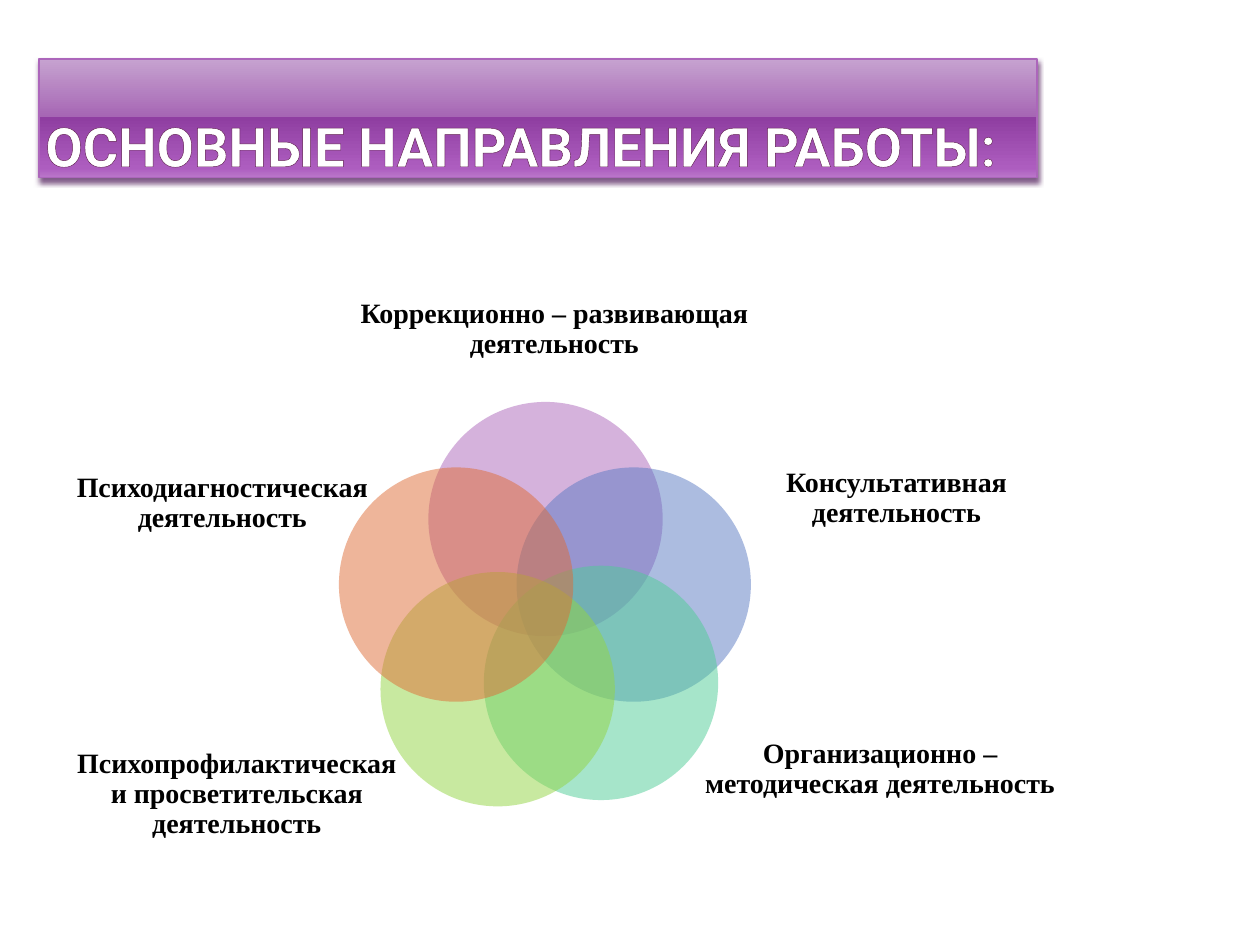
from typing import NamedTuple

from lxml import etree
from pptx import Presentation
from pptx.dml.color import RGBColor
from pptx.enum.shapes import MSO_SHAPE as Kind
from pptx.enum.text import MSO_ANCHOR as Anchor, PP_ALIGN as Align
from pptx.oxml import parse_xml
from pptx.oxml.ns import nsdecls, qn
from pptx.util import Inches, Pt

SIZE = 1.86  # diameter of every circle
TITLE = {"name": "Roboto", "size": Pt(31), "bold": True}
LABEL = {"name": "Times New Roman", "size": Pt(16), "bold": True}
STOPS = [(0, "C6A2D0"), (49, "A666B4"), (49, "8F3EA1"), (92, "AD5DBF"), (100, "BA76CA")]


class Disc(NamedTuple):
    left: float
    top: float
    color: str


class Note(NamedTuple):
    text: str
    box: tuple[float, float, float, float]


DISCS = [
    Disc(3.4, 3.19, "AC66BB"),
    Disc(4.1, 3.71, "5A7AC3"),
    Disc(3.84, 4.49, "4FCC96"),
    Disc(3.02, 4.54, "93D542"),
    Disc(2.69, 3.71, "DE6C36"),
]
NOTES = [
    Note("Коррекционно – развивающая деятельность", (2.48, 2.22, 3.84, 0.79)),
    Note("Организационно – методическая деятельность", (5.56, 5.43, 2.85, 1.35)),
    Note("Консультативная деятельность", (5.92, 3.28, 2.39, 1.35)),
    Note("Психопрофилактическая и просветительская деятельность", (0.53, 5.63, 2.7, 1.35)),
    Note("Психодиагностическая деятельность", (0.55, 3.32, 2.43, 1.35)),
]


def paint(target, color: str) -> None:
    """Give a fill one solid colour."""
    target.solid()
    target.fore_color.rgb = RGBColor.from_string(color)


def write(shape, text: str, font: dict, color: str, align, anchor, side: float = 0):
    """Put one styled paragraph in a shape and return it."""
    frame = shape.text_frame
    form = {
        "word_wrap": True, "vertical_anchor": anchor,
        "margin_left": Inches(side), "margin_right": Inches(side),
        "margin_top": 0, "margin_bottom": 0,
    }
    for key, val in form.items():
        setattr(frame, key, val)
    para = frame.paragraphs[0]
    para.alignment = align
    run = para.add_run()
    run.text = text
    for key, val in font.items():
        setattr(run.font, key, val)
    paint(run.font.fill, color)
    return para


def draw_title(slide) -> None:
    bar = slide.shapes.add_shape(
        Kind.RECTANGLE, Inches(0.31), Inches(0.47), Inches(7.92), Inches(0.94))
    bar.shadow.inherit = False
    paint(bar.line.fill, "AC66BB")
    bar.line.width = Pt(0.9)

    # Gradient from top to bottom
    stops = "".join(
        f'<a:gs pos="{pos * 1000}"><a:srgbClr val="{color}"/></a:gs>' for pos, color in STOPS)
    props = bar._element.spPr
    props.find(qn("a:prstGeom")).addnext(parse_xml(
        f'<a:gradFill {nsdecls("a")} rotWithShape="1"><a:gsLst>{stops}</a:gsLst>'
        '<a:lin ang="5400000" scaled="0"/></a:gradFill>'))

    # Soft shadow below the bar
    props.find(qn("a:effectLst")).append(parse_xml(
        f'<a:outerShdw {nsdecls("a")} blurRad="{Pt(3.1)}" dist="{Pt(2)}" dir="5400000" '
        'rotWithShape="0"><a:srgbClr val="6A3F73"><a:alpha val="83000"/></a:srgbClr>'
        '</a:outerShdw>'))

    # Heading with a hairline outline
    para = write(bar, "ОСНОВНЫЕ НАПРАВЛЕНИЯ РАБОТЫ:", TITLE, "FFFFFF",
                 Align.LEFT, Anchor.BOTTOM, 0.05)
    para.runs[0].font._element.insert(0, parse_xml(
        f'<a:ln {nsdecls("a")} w="{Pt(0.04)}"><a:solidFill>'
        '<a:srgbClr val="5E1A50"/></a:solidFill></a:ln>'))


def draw_disc(slide, disc: Disc) -> None:
    oval = slide.shapes.add_shape(
        Kind.OVAL, Inches(disc.left), Inches(disc.top), Inches(SIZE), Inches(SIZE))
    oval.shadow.inherit = False
    oval.line.fill.background()
    paint(oval.fill, disc.color)
    color = oval._element.spPr.find(qn("a:solidFill"))[0]
    etree.SubElement(color, qn("a:alpha"), val="50000")


def draw_note(slide, note: Note) -> None:
    box = slide.shapes.add_textbox(*map(Inches, note.box))
    para = write(box, note.text, LABEL, "000000", Align.CENTER, Anchor.MIDDLE)
    para.line_spacing = 0.9


def main() -> None:
    deck = Presentation()
    deck.slide_width, deck.slide_height = Inches(10), Inches(7.5)
    slide = deck.slides.add_slide(deck.slide_layouts[6])

    draw_title(slide)
    # Each circle is followed by its label
    for disc, note in zip(DISCS, NOTES):
        draw_disc(slide, disc)
        draw_note(slide, note)

    deck.save("out.pptx")


if __name__ == "__main__":
    main()
